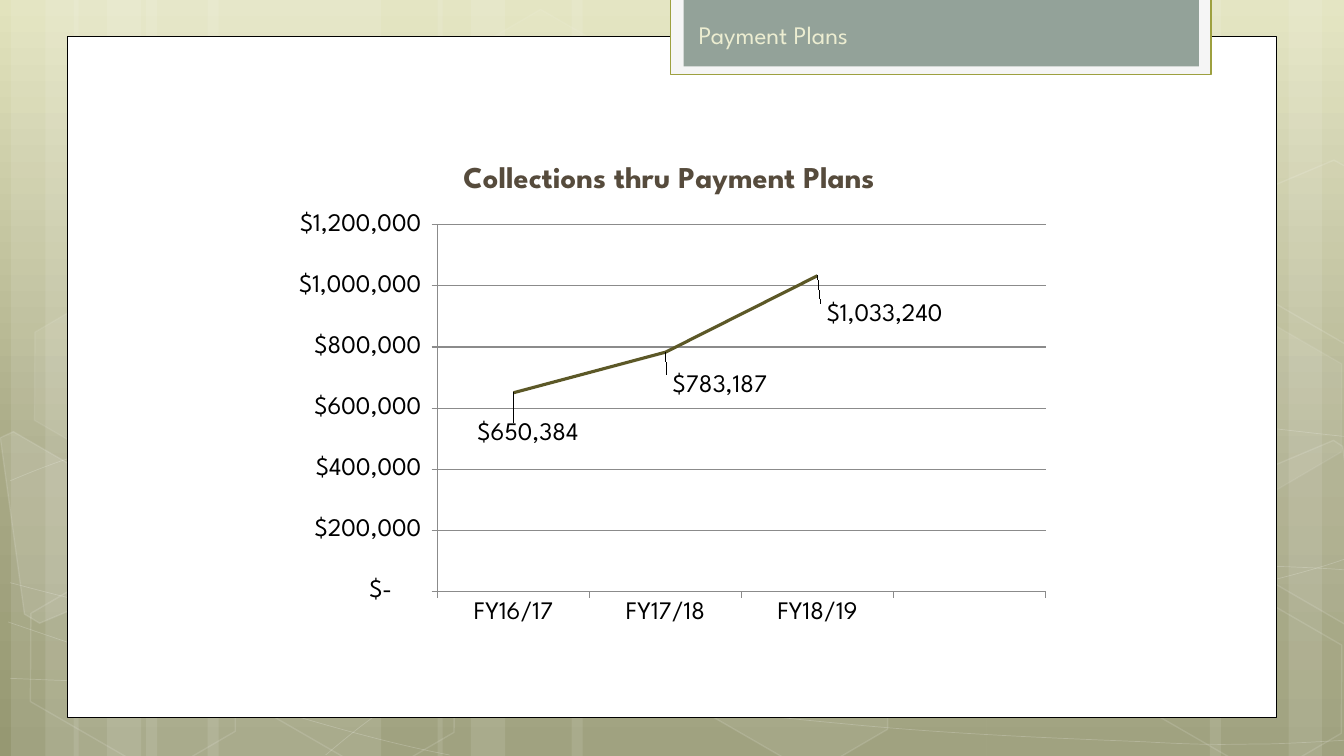
"""Build the Payment Plans slide with its line chart of collections."""
from copy import deepcopy
from math import cos, radians, sin
from typing import NamedTuple, Optional

from lxml.etree import SubElement
from pptx import Presentation
from pptx.chart.data import CategoryChartData
from pptx.dml.color import RGBColor
from pptx.enum.chart import XL_CHART_TYPE, XL_LABEL_POSITION, XL_MARKER_STYLE, XL_TICK_MARK
from pptx.enum.shapes import MSO_SHAPE
from pptx.enum.text import MSO_ANCHOR, PP_ALIGN
from pptx.oxml import parse_xml
from pptx.oxml.ns import nsdecls, qn
from pptx.util import Inches, Pt

FONT = "League Spartan"
WHITE = "FFFFFF"
GRID = "8B8B8B"
TILT = 30
CHART_WIDTH, CHART_HEIGHT = 7.78, 4.88
DOLLARS = r'_("$"* #,##0_);_("$"* \(#,##0\);_("$"* "-"??_);_(@_)'
LEADER_LINES = (
    f'<c:extLst {nsdecls("c")}><c:ext uri="{{CE6537A1-D6FC-4f65-9D91-7224C49458BB}}" '
    'xmlns:c15="http://schemas.microsoft.com/office/drawing/2012/chart">'
    '<c15:showLeaderLines val="1"/></c:ext></c:extLst>'
)


class Panel(NamedTuple):
    """A plain rectangle with its fill and border."""
    left: float
    top: float
    width: float
    height: float
    fill: str
    border: Optional[str] = None
    weight: float = 0


class Hexagon(NamedTuple):
    """A tilted hexagon with fill and outline opacity in percent."""
    left: float
    top: float
    fill_opacity: int
    line_opacity: int


class Fragment(NamedTuple):
    """A hexagon cut off by the slide edge, given by its tilted corners."""
    center: tuple
    corners: list
    fill_opacity: int


class Collection(NamedTuple):
    """A year's collections and the shift of its label in inches."""
    year: str
    amount: Optional[int]
    shift: Optional[tuple] = None


STRIPS = [(1.45, 2.33), (0.11, 0.67), (0.45, 1.11), (2.06, 2.33), (0.73, 0.67), (1.06, 1.11),
          (9.78, 2.33), (12.78, 0.67), (12, 1.11), (5.67, 4.11), (4.34, 0.67), (4.67, 1.11)]

WAVES = [
    [(0.1, 6.73), (0.82, 6.76), (1.54, 6.79), (2.54, 6.78), (3.54, 6.77), (4.77, 6.75), (6.1, 6.65),
     (7.44, 6.55), (9.33, 6.36), (10.55, 6.17), (11.78, 5.98), (13.03, 5.68), (13.43, 5.51)],
    [(0.1, 4.77), (0.48, 4.61), (0.86, 4.46), (1.62, 4.31), (2.38, 4.16), (3.45, 3.94), (4.63, 3.87),
     (5.82, 3.8), (7.25, 3.79), (8.72, 3.87), (10.19, 3.95), (12.63, 4.26), (13.43, 4.34)],
    [(0.08, 6.17), (1.69, 6.72), (3.3, 7.27), (4.46, 7.49)],
    [(0.1, 5.78), (0.51, 5.89), (0.93, 6), (1.71, 6.16), (2.48, 6.31), (3.64, 6.56), (4.75, 6.73),
     (5.86, 6.9), (7.27, 7.08), (8.37, 7.18), (9.48, 7.29), (10.66, 7.33), (11.37, 7.36),
     (12.07, 7.4), (12.25, 7.38), (12.6, 7.38), (12.94, 7.37), (13.19, 7.35), (13.43, 7.34)],
    [(3.23, 7.49), (3.47, 7.29), (3.7, 7.09), (4.03, 6.91), (4.35, 6.73), (4.8, 6.53), (5.17, 6.39),
     (5.54, 6.25), (5.77, 6.19), (6.26, 6.09), (6.75, 5.99), (7.65, 5.85), (8.11, 5.78),
     (8.58, 5.71), (8.65, 5.71), (9.07, 5.69), (9.48, 5.66), (10.13, 5.63), (10.59, 5.62),
     (11.05, 5.61), (11.82, 5.62), (11.82, 5.62), (12.1, 5.62), (12.4, 5.62), (12.7, 5.62),
     (12.95, 5.63), (13.17, 5.64), (13.29, 5.65), (13.41, 5.66), (13.37, 5.65), (13.41, 5.66)],
]

HEXAGONS = [Hexagon(4.45, 0.36, 4, 8), Hexagon(6.62, 5.89, 6, 12), Hexagon(0.15, 5.91, 0, 12),
            Hexagon(0.19, 3.12, 7, 8), Hexagon(2.32, 5.92, 0, 12), Hexagon(11.12, 5.93, 0, 12),
            Hexagon(11.12, 3.14, 7, 8)]

FRAGMENTS = [
    Fragment((0.48, 5.35), [(0, 4.34), (0.13, 4.28), (1.15, 4.87), (1.27, 5.81), (0.39, 6.18), (0.24, 6.09)], 10),
    Fragment((13.13, 5.2), [(12.35, 4.74), (13.23, 4.37), (13.32, 4.43), (13.57, 6.25), (13.49, 6.28),
                            (12.47, 5.69)], 4),
    Fragment((13.13, 2.41), [(12.35, 1.96), (13.23, 1.59), (13.34, 1.65), (13.57, 3.46), (13.49, 3.5),
                             (12.47, 2.91)], 0),
]

PANELS = [Panel(0.67, 0.36, 11.99, 6.76, WHITE, "000000", 0.5),
          Panel(6.65, -0.02, 5.36, 0.76, "F5F5F5", "9DA03F", 1.25),
          Panel(6.78, -0.02, 5.11, 0.68, "93A299")]

COLLECTIONS = [Collection("FY16/17", 650384, (-0.46, 0.41)), Collection("FY17/18", 783187, (-0.03, 0.34)),
               Collection("FY18/19", 1033240, (-0.01, 0.39)), Collection(" ", None)]


def color(hex_code: str) -> RGBColor:
    """Turn a hex string into a colour."""
    return RGBColor.from_string(hex_code)


def set_opacity(parent, percent: int) -> None:
    """Set the opacity of the solid fill directly inside an element."""
    if percent < 100:
        tint = parent.find(qn("a:solidFill")).find(qn("a:srgbClr"))
        SubElement(tint, qn("a:alpha"), val=str(percent * 1000))


def paint(shape, fill=None, fill_opacity=100, border=None, weight=1.0, line_opacity=100) -> None:
    """Give a shape its fill and outline."""
    shape.shadow.inherit = False
    if fill and fill_opacity:
        shape.fill.solid()
        shape.fill.fore_color.rgb = color(fill)
        set_opacity(shape.element.spPr, fill_opacity)
    else:
        shape.fill.background()
    if border:
        shape.line.color.rgb = color(border)
        shape.line.width = Pt(weight)
        set_opacity(shape.element.spPr.find(qn("a:ln")), line_opacity)
    else:
        shape.line.fill.background()


def write(text_frame, text: str, *, size: float, tint: str, bold=False, align=PP_ALIGN.LEFT) -> None:
    """Fill a text frame with one formatted paragraph."""
    text_frame.text = text
    paragraph = text_frame.paragraphs[0]
    paragraph.alignment = align
    font = paragraph.runs[0].font
    font.name, font.size, font.bold = FONT, Pt(size), bold
    font.color.rgb = color(tint)


def add_box(slide, kind, left: float, top: float, width: float, height: float):
    """Add a preset shape measured in inches."""
    return slide.shapes.add_shape(kind, Inches(left), Inches(top), Inches(width), Inches(height))


def add_outline(slide, points: list, close: bool):
    """Add a freeform through points in inches."""
    start, *others = [(Inches(x), Inches(y)) for x, y in points]
    builder = slide.shapes.build_freeform(*start, scale=1)
    builder.add_line_segments(others, close=close)
    return builder.convert_to_shape()


def add_wave(slide, controls: list):
    """Add an open chain of cubic curves through its control points."""
    wave = add_outline(slide, controls, False)
    segments = list(wave.element.iter(qn("a:lnTo")))
    for first in range(0, len(segments), 3):
        trio = segments[first:first + 3]
        curve = SubElement(trio[0].getparent(), qn("a:cubicBezTo"))
        for segment in trio:
            curve.append(segment[0])
            segment.getparent().remove(segment)
    return wave


def level(fragment: Fragment) -> list:
    """Turn a fragment's corners back to the position before its tilt."""
    (x0, y0), turn = fragment.center, radians(TILT)
    return [(x0 + (x - x0) * cos(turn) + (y - y0) * sin(turn),
             y0 + (y - y0) * cos(turn) - (x - x0) * sin(turn)) for x, y in fragment.corners]


def draw_background(slide) -> None:
    """Draw the gradient, light strips, waves and hexagons."""
    fill = slide.background.fill
    fill.gradient()
    fill.gradient_angle = 270
    stop_list = slide.element.find(".//" + qn("a:gsLst"))
    stop_list.append(deepcopy(stop_list[0]))
    for stop, (position, tint) in zip(fill.gradient_stops, [(0, "E2E3BD"), (0.62, "A8A985"), (1, "969872")]):
        stop.position = position
        stop.color.rgb = color(tint)
    for left, width in STRIPS:
        paint(add_box(slide, MSO_SHAPE.RECTANGLE, left, 0, width, 7.5), WHITE, 10)
    for wave in WAVES:
        paint(add_wave(slide, wave), border=WHITE, weight=0.5, line_opacity=20)
    for item in HEXAGONS:
        hexagon = add_box(slide, MSO_SHAPE.HEXAGON, item.left, item.top, 2.34, 1.52)
        hexagon.adjustments[0], hexagon.adjustments[1] = 0.285, 1.155
        hexagon.rotation = TILT
        paint(hexagon, WHITE, item.fill_opacity, WHITE, 1, item.line_opacity)
    for item in FRAGMENTS:
        fragment = add_outline(slide, level(item), True)
        fragment.rotation = TILT
        paint(fragment, WHITE, item.fill_opacity, WHITE, 1, 12)


def chart_layout(x: float, y: float, size: tuple = ()):
    """Make a manual chart layout from inches, for a plot area if a size is given."""
    target = '<c:layoutTarget val="inner"/><c:xMode val="edge"/><c:yMode val="edge"/>' if size else ""
    scale = (CHART_WIDTH, CHART_HEIGHT) * 2
    values = "".join(f'<c:{key} val="{inches / full:.4f}"/>' for key, inches, full in zip("xywh", (x, y, *size), scale))
    return parse_xml(f'<c:layout {nsdecls("c")}><c:manualLayout>{target}{values}</c:manualLayout></c:layout>')


def add_collections_chart(slide) -> None:
    """Add the line chart of yearly collections."""
    data = CategoryChartData(number_format=DOLLARS)
    data.categories = [item.year for item in COLLECTIONS]
    data.add_series("Series 1", [item.amount for item in COLLECTIONS])
    chart = slide.shapes.add_chart(XL_CHART_TYPE.LINE, Inches(2.75), Inches(1.42),
                                   Inches(CHART_WIDTH), Inches(CHART_HEIGHT), data).chart
    chart.font.name, chart.font.size = FONT, Pt(18)
    chart.font.color.rgb = color("000000")
    chart.has_legend = False
    write(chart.chart_title.text_frame, "Collections thru Payment Plans", size=21.6, tint="564B3C",
          bold=True, align=PP_ALIGN.CENTER)
    amounts = chart.value_axis
    amounts.minimum_scale, amounts.maximum_scale, amounts.major_unit = 0, 1200000, 200000
    amounts.tick_labels.number_format = DOLLARS
    amounts.tick_labels.number_format_is_linked = False
    for axis in (amounts, chart.category_axis):
        axis.major_tick_mark = XL_TICK_MARK.OUTSIDE
        axis.format.line.color.rgb = color(GRID)
    amounts.major_gridlines.format.line.color.rgb = color(GRID)

    plot = chart.plots[0]
    plot.vary_by_categories = False
    trend = plot.series[0]
    trend.smooth = False
    trend.marker.style = XL_MARKER_STYLE.NONE
    trend.format.line.color.rgb = color("5C5827")
    trend.format.line.width = Pt(2.25)
    trend.data_labels.show_value = True
    trend.data_labels.position = XL_LABEL_POSITION.RIGHT
    labelled = [item for item in COLLECTIONS if item.shift]
    for index in range(len(labelled)):
        trend.points[index].data_label.position = XL_LABEL_POSITION.RIGHT
    for label, item in zip(chart.element.iter(qn("c:dLbl")), labelled):
        label.insert(1, chart_layout(*item.shift))
    chart.element.find(".//" + qn("c:dLbls")).append(parse_xml(LEADER_LINES))

    plot_area = chart.element.find(".//" + qn("c:plotArea"))
    for automatic in plot_area.findall(qn("c:layout")):
        plot_area.remove(automatic)
    plot_area.insert(0, chart_layout(1.59, 0.81, (6.03, 3.64)))


def main() -> None:
    """Build and save the slide."""
    deck = Presentation()
    deck.slide_width, deck.slide_height = Inches(13.33), Inches(7.5)
    slide = deck.slides.add_slide(deck.slide_layouts[5])
    draw_background(slide)
    for panel in PANELS:
        sheet = add_box(slide, MSO_SHAPE.RECTANGLE, *panel[:4])
        paint(sheet, panel.fill, border=panel.border, weight=panel.weight)
    title = slide.shapes.title
    title.left, title.top, title.width, title.height = map(Inches, (6.83, 0.08, 3.67, 0.46))
    title.text_frame.vertical_anchor = MSO_ANCHOR.BOTTOM
    write(title.text_frame, "Payment Plans", size=18, tint="ECEDD1")
    slide.shapes.element.append(title.element)
    add_collections_chart(slide)
    deck.save("out.pptx")


if __name__ == "__main__":
    main()
